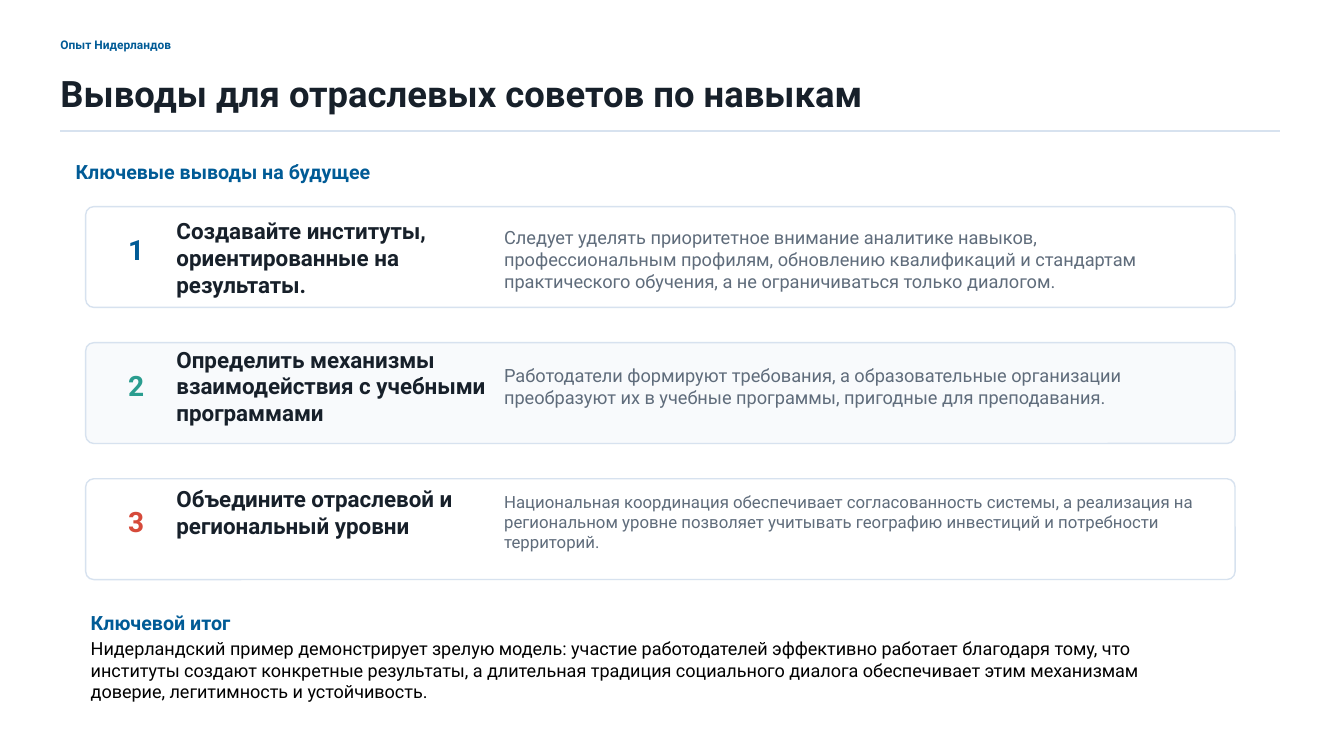
from lxml.etree import SubElement
from pptx import Presentation
from pptx.dml.color import RGBColor
from pptx.enum.shapes import MSO_CONNECTOR, MSO_SHAPE
from pptx.enum.text import MSO_ANCHOR, MSO_AUTO_SIZE, PP_ALIGN
from pptx.oxml.ns import qn
from pptx.util import Inches, Pt

FONT = "Roboto"
BLUE, GREEN, RED = "005B96", "2A9D8F", "D64A3A"
INK, GRAY, BLACK = "17202A", "5F6C7B", "000000"
BORDER, WHITE, PALE = "D7E2EF", "FFFFFF", "F8FAFC"

CARD_LEFT, CARD_TOP, CARD_WIDTH, CARD_HEIGHT = 0.85, 2.05, 11.4, 1
CARD_STEP = 1.35

# number colour, fill, heading, heading height, details, details width, height, size
CARDS = [
    (BLUE, WHITE, "Создавайте институты, ориентированные на результаты.", 0.65,
     "Следует уделять приоритетное внимание аналитике навыков, профессиональным "
     "профилям, обновлению квалификаций и стандартам практического обучения, "
     "а не ограничиваться только диалогом.", 6.7, 0.68, 13),
    (GREEN, PALE, "Определить механизмы взаимодействия с учебными программами", 0.5,
     "Работодатели формируют требования, а образовательные организации "
     "преобразуют их в учебные программы, пригодные для преподавания.",
     6.7, 0.5, 13),
    (RED, WHITE, "Объедините отраслевой и региональный уровни", 0.3,
     "Национальная координация обеспечивает согласованность системы, "
     "а реализация на региональном уровне позволяет учитывать географию "
     "инвестиций и потребности территорий.", 7.01, 0.5, 12),
]


def color(value):
    return RGBColor.from_string(value)


def write(shape, text, size, text_color, bold=False, align=PP_ALIGN.LEFT):
    frame = shape.text_frame
    frame.word_wrap = True
    frame.auto_size = MSO_AUTO_SIZE.NONE
    frame.vertical_anchor = MSO_ANCHOR.MIDDLE
    frame.margin_left = frame.margin_right = 0
    frame.margin_top = frame.margin_bottom = 0
    paragraph = frame.paragraphs[0]
    paragraph.alignment = align
    run = paragraph.add_run()
    run.text = text
    run.font.name = FONT
    run.font.size = Pt(size)
    run.font.bold = bold
    run.font.color.rgb = color(text_color)


def add_text(slide, left, top, width, height, *style, **options):
    box = slide.shapes.add_textbox(
        Inches(left), Inches(top), Inches(width), Inches(height))
    write(box, *style, **options)


def add_header(slide, left, top, width):
    # Section label
    add_text(slide, left, top, 4.8, 0.25, "Опыт Нидерландов", 8.5, BLUE, bold=True)

    # Slide title
    title = slide.shapes.title
    title.left, title.top = Inches(left), Inches(top + 0.33)
    title.width, title.height = Inches(9.8), Inches(0.55)
    write(title, "Выводы для отраслевых советов по навыкам", 26, INK, bold=True)

    # Divider
    rule_top = Inches(top + 0.98)
    rule = slide.shapes.add_connector(
        MSO_CONNECTOR.STRAIGHT, Inches(left), rule_top, Inches(left + width), rule_top)
    rule.line.color.rgb = color(BORDER)
    rule.line.width = Pt(1)
    SubElement(rule._element.spPr, qn("a:effectLst"))


def add_card(slide, left, top, width, height, number, card):
    (number_color, fill, heading, heading_height,
     details, details_width, details_height, details_size) = card

    # Rounded panel
    panel = slide.shapes.add_shape(
        MSO_SHAPE.ROUNDED_RECTANGLE,
        Inches(left), Inches(top), Inches(width), Inches(height))
    panel.adjustments[0] = 0.08
    panel.shadow.inherit = False
    panel.fill.solid()
    panel.fill.fore_color.rgb = color(fill)
    panel.line.color.rgb = color(BORDER)
    panel.line.width = Pt(1)

    # Number, heading and details
    add_text(slide, left + 0.3, top + 0.25, 0.4, 0.35, str(number), 20,
             number_color, bold=True, align=PP_ALIGN.CENTER)
    add_text(slide, left + 0.9, top + 0.18, 3.1, heading_height,
             heading, 16, INK, bold=True)
    add_text(slide, left + 4.15, top + 0.18, details_width, details_height,
             details, details_size, GRAY)


def add_summary(slide, left, top, width):
    add_text(slide, left, top, 1.5, 0.25, "Ключевой итог", 14, BLUE, bold=True)
    add_text(slide, left, top + 0.37, width, 0.45,
             "Нидерландский пример демонстрирует зрелую модель: участие "
             "работодателей эффективно работает благодаря тому, что институты "
             "создают конкретные результаты, а длительная традиция социального "
             "диалога обеспечивает этим механизмам доверие, легитимность и "
             "устойчивость.", 12.9, BLACK)


def main():
    presentation = Presentation()
    presentation.slide_width = Inches(13.33)
    presentation.slide_height = Inches(7.5)
    slide = presentation.slides.add_slide(presentation.slide_layouts[5])

    add_header(slide, 0.6, 0.32, 12.1)
    add_text(slide, 0.75, 1.56, 5.7, 0.28,
             "Ключевые выводы на будущее", 14, BLUE, bold=True)
    for index, card in enumerate(CARDS):
        add_card(slide, CARD_LEFT, CARD_TOP + index * CARD_STEP,
                 CARD_WIDTH, CARD_HEIGHT, index + 1, card)
    add_summary(slide, 0.9, 6.05, 11)

    presentation.save("out.pptx")


if __name__ == "__main__":
    main()
